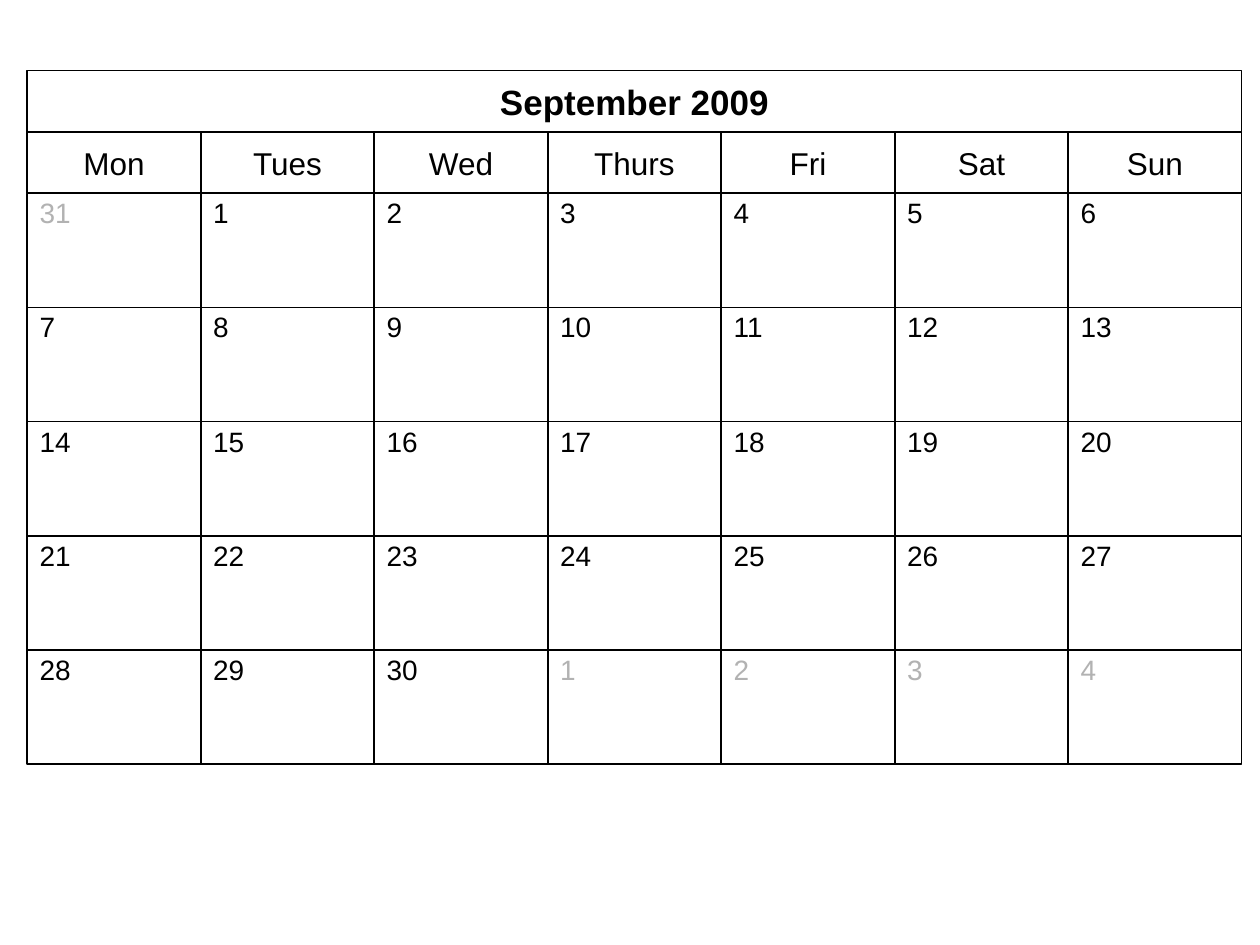
from dataclasses import dataclass

from pptx import Presentation
from pptx.dml.color import RGBColor
from pptx.enum.shapes import MSO_SHAPE
from pptx.enum.text import MSO_ANCHOR, MSO_AUTO_SIZE, PP_ALIGN
from pptx.util import Cm, Pt

RECT = MSO_SHAPE.RECTANGLE
TOP, MID = MSO_ANCHOR.TOP, MSO_ANCHOR.MIDDLE
LEFT, MID_TEXT = PP_ALIGN.LEFT, PP_ALIGN.CENTER
NO_FIT = MSO_AUTO_SIZE.NONE


@dataclass(frozen=True)
class Theme:
    font: str = "Arial"
    ink: RGBColor = RGBColor(0, 0, 0)
    pale: RGBColor = RGBColor(0xB2, 0xB2, 0xB2)
    paper: RGBColor = RGBColor(255, 255, 255)
    title: float = 20
    name: float = 18
    date: float = 16
    rule: float = 1


THEME = Theme()
TITLE = "September 2009"
NAMES = ["Mon", "Tues", "Wed", "Thurs", "Fri", "Sat", "Sun"]
BEFORE, MONTH, AFTER = [31], range(1, 31), range(1, 5)
FRAME = {
    "margin_left": Cm(0.25), "margin_right": Cm(0.25),
    "margin_top": Cm(0.05), "margin_bottom": Cm(0.05),
    "word_wrap": True, "auto_size": NO_FIT,
}


def apply(item, values):
    for key, value in values.items():
        setattr(item, key, value)


def style(cell, text, size, color=THEME.ink, bold=False, anchor=MID, align=MID_TEXT):
    """Give a cell its ruled box and its text."""
    cell.shadow.inherit = False
    cell.fill.solid()
    cell.fill.fore_color.rgb = THEME.paper
    cell.line.color.rgb = THEME.ink
    cell.line.width = Pt(THEME.rule)
    frame = cell.text_frame
    apply(frame, {**FRAME, "vertical_anchor": anchor})
    para = frame.paragraphs[0]
    para.alignment = align
    run = para.add_run()
    run.text = text
    apply(run.font, {"name": THEME.font, "size": Pt(size), "bold": bold})
    run.font.color.rgb = color


def add_title(slide, box):
    title = slide.shapes.title
    apply(title, dict(zip(("left", "top", "width", "height"), map(Cm, box))))
    style(title, TITLE, THEME.title, bold=True)


def add_grid(slide, box, cols, items, **form):
    """Fill the box row by row with (text, colour) items."""
    left, top, width, height = box
    wide, high = width / cols, height / (len(items) // cols)
    for i, (text, color) in enumerate(items):
        row, col = divmod(i, cols)
        cell = slide.shapes.add_shape(
            RECT, Cm(left + col * wide), Cm(top + row * high), Cm(wide), Cm(high))
        style(cell, text, color=color, **form)


def add_month(slide, box, head):
    """Stack the title, the day names and the weeks; head is a heading's height."""
    left, top, width, height = box
    cols = len(NAMES)
    add_title(slide, (left, top, width, head))
    add_grid(slide, (left, top + head, width, head), cols,
             [(name, THEME.ink) for name in NAMES], size=THEME.name)
    parts = [(BEFORE, THEME.pale), (MONTH, THEME.ink), (AFTER, THEME.pale)]
    dates = [(str(day), color) for days, color in parts for day in days]
    add_grid(slide, (left, top + 2 * head, width, height - 2 * head), cols,
             dates, size=THEME.date, anchor=TOP, align=LEFT)


def main():
    deck = Presentation()
    deck.slide_width, deck.slide_height = Cm(25.4), Cm(19.05)
    slide = deck.slides.add_slide(deck.slide_layouts.get_by_name("Title Only"))
    add_month(slide, (0.55, 1.42, 24.48, 13.98), head=1.24)
    deck.save("out.pptx")


if __name__ == "__main__":
    main()
